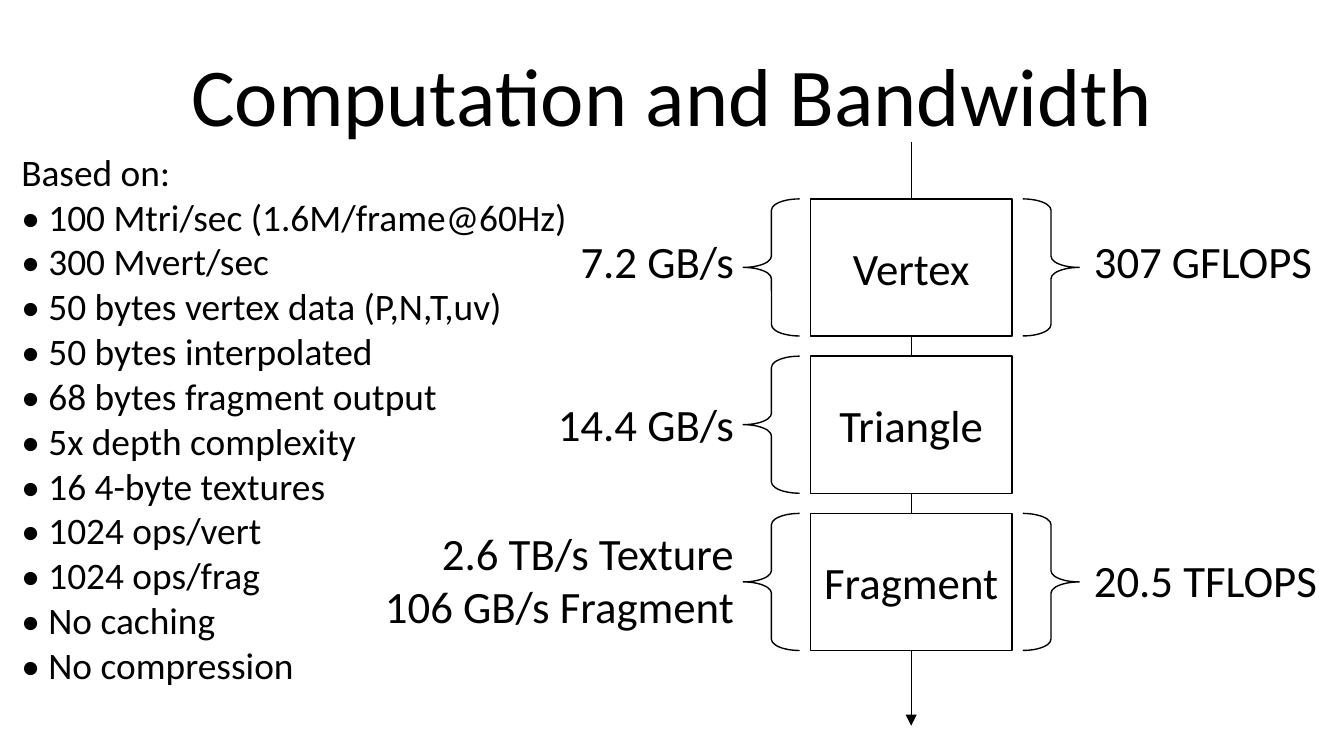
from lxml.etree import SubElement
from pptx import Presentation
from pptx.dml.color import RGBColor
from pptx.enum.shapes import MSO_CONNECTOR as Connector, MSO_SHAPE as Shape
from pptx.enum.text import MSO_ANCHOR as Anchor, MSO_AUTO_SIZE as AutoSize, PP_ALIGN as Align
from pptx.oxml.ns import qn
from pptx.util import Inches, Pt

BLACK = RGBColor(0x00, 0x00, 0x00)
LINE_WIDTH = Pt(0.75)

# Columns: bandwidth label | brace | stage | brace | compute label
BANDWIDTH_LEFT, BANDWIDTH_WIDTH = Inches(2.7), Inches(2.86)
LEFT_BRACE, RIGHT_BRACE, BRACE_WIDTH = Inches(5.53), Inches(7.61), Inches(0.42)
STAGE_LEFT, STAGE_WIDTH = Inches(6.03), Inches(1.5)
COMPUTE_LEFT, COMPUTE_WIDTH = Inches(8.04), Inches(1.88)
# Rows: one for each stage of the pipeline
FIRST_ROW, ROW_PITCH, ROW_HEIGHT = Inches(1.48), Inches(1.17), Inches(1.02)
FLOW_TOP, FLOW_BOTTOM = Inches(1.06), Inches(5.4)

# Stage, bandwidth lines, compute, middle of the labels
STAGES = [
    ("Vertex", ["7.2 GB/s"], ["307 GFLOPS"], 1.94),
    ("Triangle", ["14.4 GB/s"], [], 3.15),
    ("Fragment", ["2.6 TB/s Texture", "106 GB/s Fragment"], ["20.5 TFLOPS"], 4.31),
]
ASSUMPTIONS = [
    "Based on:",
    "• 100 Mtri/sec (1.6M/frame@60Hz)",
    "• 300 Mvert/sec",
    "• 50 bytes vertex data (P,N,T,uv)",
    "• 50 bytes interpolated",
    "• 68 bytes fragment output",
    "• 5x depth complexity",
    "• 16 4-byte textures",
    "• 1024 ops/vert",
    "• 1024 ops/frag",
    "• No caching",
    "• No compression",
]


def write(frame, lines, size, align):
    """Put each line in its own paragraph."""
    for index, line in enumerate(lines):
        paragraph = frame.paragraphs[0] if index == 0 else frame.add_paragraph()
        paragraph.alignment = align
        run = paragraph.add_run()
        run.text = line
        run.font.name = "Calibri"
        run.font.size = Pt(size)
        run.font.color.rgb = BLACK


def outline(kind, left, top, width):
    """Add an unfilled shape, one row high, with a thin black line."""
    shape = slide.shapes.add_shape(kind, left, top, width, ROW_HEIGHT)
    shape.shadow.inherit = False
    shape.fill.background()
    shape.line.color.rgb = BLACK
    shape.line.width = LINE_WIDTH
    return shape


prs = Presentation()
prs.slide_width = Inches(10)
prs.slide_height = prs.slide_width * 9 // 16
slide = prs.slides.add_slide(prs.slide_layouts[5])

title = slide.shapes.title
title.left, title.top = Inches(0.5), Inches(0.23)
title.width, title.height = Inches(9), Inches(0.94)
title.text_frame.vertical_anchor = Anchor.MIDDLE
write(title.text_frame, ["Computation and Bandwidth"], 44, Align.CENTER)

basis = slide.shapes.add_textbox(Inches(0.06), FLOW_TOP, Inches(4.98), Inches(4.14)).text_frame
basis.word_wrap = True
basis.auto_size = AutoSize.SHAPE_TO_FIT_TEXT
write(basis, ASSUMPTIONS, 20, Align.LEFT)

stage_boxes = []
for row, (stage, bandwidth, compute, label_middle) in enumerate(STAGES):
    top = FIRST_ROW + row * ROW_PITCH
    box = outline(Shape.RECTANGLE, STAGE_LEFT, top, STAGE_WIDTH)
    box.text_frame.vertical_anchor = Anchor.MIDDLE
    write(box.text_frame, [stage], 24, Align.CENTER)
    stage_boxes.append(box)

    for lines, brace_kind, brace_left, left, width, align in (
        (bandwidth, Shape.LEFT_BRACE, LEFT_BRACE, BANDWIDTH_LEFT, BANDWIDTH_WIDTH, Align.RIGHT),
        (compute, Shape.RIGHT_BRACE, RIGHT_BRACE, COMPUTE_LEFT, COMPUTE_WIDTH, Align.LEFT),
    ):
        if not lines:
            continue
        brace = outline(brace_kind, brace_left, top, BRACE_WIDTH)
        brace.adjustments[0] = 0.2
        height = Inches(0.1 + 0.4 * len(lines))
        label = slide.shapes.add_textbox(left, Inches(label_middle) - height // 2, width, height).text_frame
        label.word_wrap = False
        label.auto_size = AutoSize.SHAPE_TO_FIT_TEXT
        label.vertical_anchor = Anchor.MIDDLE
        write(label, lines, 24, align)

flow_x = STAGE_LEFT + STAGE_WIDTH // 2
for source, target in zip([None] + stage_boxes, stage_boxes + [None]):
    flow = slide.shapes.add_connector(Connector.STRAIGHT, flow_x, FLOW_TOP, flow_x, FLOW_BOTTOM)
    if source:
        flow.begin_connect(source, 2)
    if target:
        flow.end_connect(target, 0)
    flow.line.color.rgb = BLACK
    flow.line.width = LINE_WIDTH
    if not target:
        SubElement(flow.line._get_or_add_ln(), qn("a:tailEnd"), type="triangle")
    SubElement(flow._element.spPr, qn("a:effectLst"))

prs.save("out.pptx")
